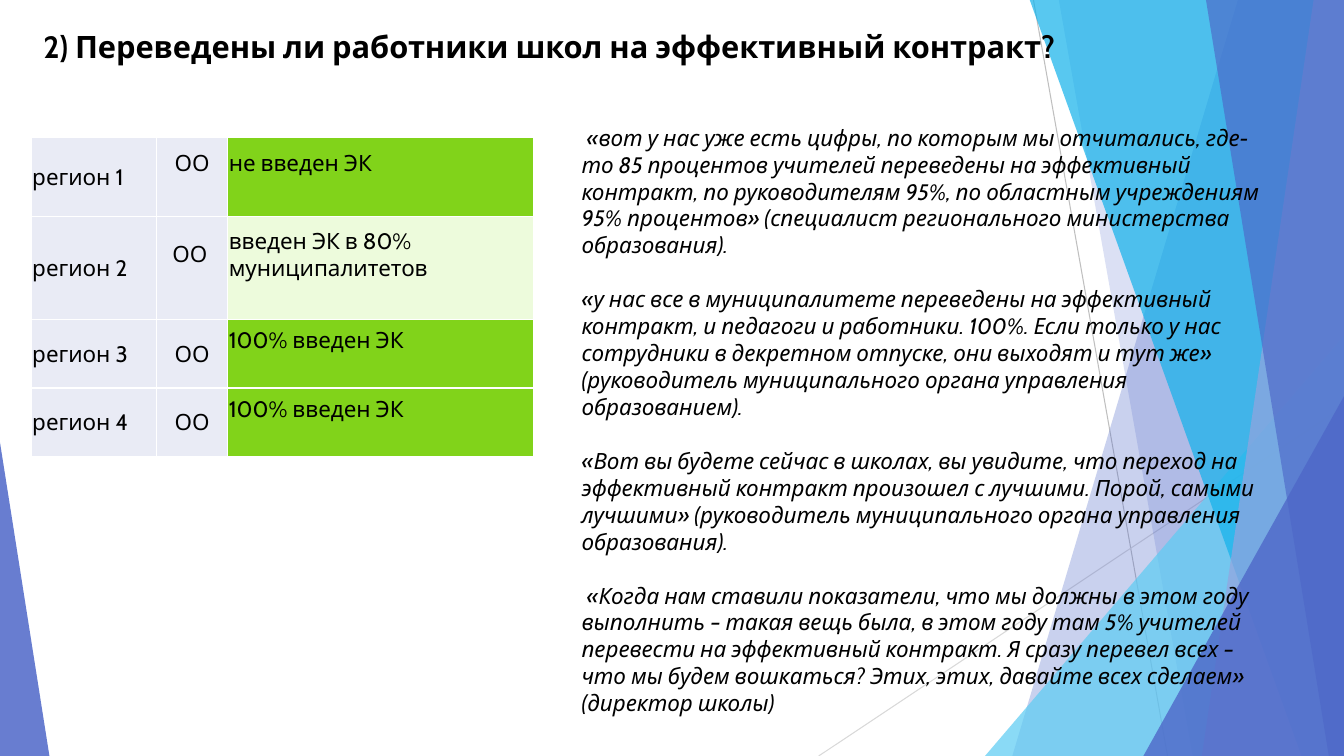
from lxml import etree
from pptx import Presentation
from pptx.dml.color import RGBColor
from pptx.enum import shapes, text
from pptx.oxml import ns
from pptx.util import Inches, Pt

FONT = "Cabin"
BLACK = RGBColor(0x00, 0x00, 0x00)
WHITE = RGBColor(0xFF, 0xFF, 0xFF)
GREY = RGBColor(0xBF, 0xBF, 0xBF)
LIGHT_GREY = RGBColor(0xD9, 0xD9, 0xD9)
INDIGO = RGBColor(0x4E, 0x67, 0xC8)
PALE_INDIGO = RGBColor(0x95, 0xA4, 0xDE)
SKY = RGBColor(0x5E, 0xCC, 0xF3)
AZURE = RGBColor(0x12, 0xB2, 0xEB)
LAVENDER = RGBColor(0xE9, 0xEB, 0xF5)
GREEN = RGBColor(0x81, 0xD3, 0x1A)
PALE_GREEN = RGBColor(0xED, 0xFB, 0xDC)

WIDTH, HEIGHT = 13.33, 7.5
LINE = 0.27

HEADING = "2) Переведены ли работники школ на эффективный контракт?"
REGIONS = [
    ("регион 1", "не введен ЭК", GREEN, 0.79),
    ("регион 2", "введен ЭК в 80% муниципалитетов", PALE_GREEN, 1.02),
    ("регион 3", "100% введен ЭК", GREEN, 0.68),
    ("регион 4", "100% введен ЭК", GREEN, 0.68),
]
QUOTES = [
    " «вот у нас уже есть цифры, по которым мы отчитались, где-то 85 процентов "
    "учителей переведены на эффективный контракт, по руководителям 95%, по областным "
    "учреждениям 95% процентов» (специалист регионального министерства образования).",
    "«у нас все в муниципалитете переведены на эффективный контракт, и педагоги и "
    "работники. 100%. Если только у нас сотрудники в декретном отпуске, они выходят и "
    "тут же» (руководитель муниципального органа управления образованием).",
    "«Вот вы будете сейчас в школах, вы увидите, что переход на эффективный контракт "
    "произошел с лучшими. Порой, самыми лучшими» (руководитель муниципального органа "
    "управления образования).",
    " «Когда нам ставили показатели, что мы должны в этом году выполнить – такая вещь "
    "была, в этом году там 5% учителей перевести на эффективный контракт. Я сразу "
    "перевел всех – что мы будем вошкаться? Этих, этих, давайте всех сделаем» "
    "(директор школы)",
]


def format_text(paragraph, size, bold=False, italic=False):
    for run in paragraph.runs:
        run.font.name = FONT
        run.font.size = Pt(size)
        run.font.bold = bold
        run.font.italic = italic
        run.font.color.rgb = BLACK


def paint(shape, color, opacity):
    shape.shadow.inherit = False
    shape.line.fill.background()
    shape.fill.solid()
    shape.fill.fore_color.rgb = color
    tint = shape._element.spPr.find(".//" + ns.qn("a:srgbClr"))
    etree.SubElement(tint, ns.qn("a:alpha"), val=str(opacity * 1000))


def add_ray(slide, start, end, color):
    ray = slide.shapes.add_connector(
        shapes.MSO_CONNECTOR.STRAIGHT, *map(Inches, start + end))
    ray.line.color.rgb = color
    ray.line.width = Pt(0.75)
    etree.SubElement(ray._element.spPr, ns.qn("a:effectLst"))


def add_panel(slide, top_x, bottom_x, color, opacity):
    corners = [(WIDTH, -0.01), (WIDTH, HEIGHT), (bottom_x, HEIGHT)]
    outline = slide.shapes.build_freeform(Inches(top_x), Inches(-0.01))
    outline.add_line_segments([(Inches(x), Inches(y)) for x, y in corners])
    paint(outline.convert_to_shape(), color, opacity)


def add_wedge(slide, left, top, width, apex, color, opacity):
    wedge = slide.shapes.add_shape(
        shapes.MSO_SHAPE.ISOSCELES_TRIANGLE,
        *map(Inches, (left, top, width, HEIGHT - top)))
    wedge.adjustments[0] = apex
    paint(wedge, color, opacity)


def add_backdrop(slide):
    add_ray(slide, (10.25, 0), (11.58, HEIGHT), GREY)
    add_ray(slide, (WIDTH, 4.03), (8.12, HEIGHT), LIGHT_GREY)
    add_panel(slide, 12.28, 10.04, INDIGO, 30)
    add_panel(slide, 10.5, 11.83, INDIGO, 20)
    add_wedge(slide, 9.77, 3.33, 3.56, 1, SKY, 72)
    add_panel(slide, 10.21, 12.91, AZURE, 70)
    add_panel(slide, 13.03, 11.92, PALE_INDIGO, 70)
    add_panel(slide, 11.96, 13.18, INDIGO, 65)
    add_wedge(slide, 11.34, 3.93, 1.99, 1, INDIGO, 80)
    add_wedge(slide, 0, 4.39, 0.49, 0, INDIGO, 85)


def set_title(slide):
    title = slide.shapes.title
    title.left, title.top, title.width, title.height = map(
        Inches, (0.33, 0.22, 12.39, 0.8))
    frame = title.text_frame
    frame.text = HEADING
    frame.auto_size = text.MSO_AUTO_SIZE.NONE
    frame.vertical_anchor = text.MSO_ANCHOR.TOP
    frame.paragraphs[0].alignment = text.PP_ALIGN.LEFT
    format_text(frame.paragraphs[0], 22, bold=True)
    slide.shapes._spTree.append(title._element)


def add_borders(cell):
    properties = cell._tc.get_or_add_tcPr()
    for index, side in enumerate(("lnL", "lnR", "lnT", "lnB")):
        border = etree.Element(ns.qn("a:" + side), w=str(Pt(1)))
        fill = etree.SubElement(border, ns.qn("a:solidFill"))
        etree.SubElement(fill, ns.qn("a:srgbClr"), val=str(WHITE))
        properties.insert(index, border)


def fill_cell(cell, wording, color, align=text.PP_ALIGN.LEFT, left=0.01, bottom=0):
    cell.text_frame.text = wording
    cell.vertical_anchor = text.MSO_ANCHOR.MIDDLE
    cell.margin_left = Inches(left)
    cell.margin_right = cell.margin_top = Inches(0.01)
    cell.margin_bottom = Inches(bottom)
    cell.fill.solid()
    cell.fill.fore_color.rgb = color
    paragraph = cell.text_frame.paragraphs[0]
    paragraph.alignment = align
    format_text(paragraph, 16)
    add_borders(cell)


def add_region_table(slide):
    table = slide.shapes.add_table(
        len(REGIONS), 3, *map(Inches, (0.31, 1.36, 4.98, 3.17))).table
    for column, width in zip(table.columns, (1.24, 0.71, 3.03)):
        column.width = Inches(width)
    for index, (region, status, color, height) in enumerate(REGIONS):
        table.rows[index].height = Inches(height)
        fill_cell(table.cell(index, 0), region, LAVENDER)
        fill_cell(table.cell(index, 1), "ОО", LAVENDER,
                  text.PP_ALIGN.LEFT if index == 1 else text.PP_ALIGN.CENTER,
                  0.16 if index == 1 else 0.01,
                  LINE if index < 2 else 0)
        fill_cell(table.cell(index, 2), status, color, bottom=LINE)


def add_quotes(slide):
    frame = slide.shapes.add_textbox(
        *map(Inches, (5.67, 1.15, 7.04, 6.06))).text_frame
    frame.word_wrap = True
    frame.margin_top = Inches(0.08)
    frame.text = "\n".join(QUOTES)
    for paragraph in frame.paragraphs:
        format_text(paragraph, 16, italic=True)
    for paragraph in frame.paragraphs[:-1]:
        paragraph.space_after = Inches(LINE)


def main():
    presentation = Presentation()
    presentation.slide_width = Inches(WIDTH)
    presentation.slide_height = Inches(HEIGHT)
    slide = presentation.slides.add_slide(presentation.slide_layouts[5])
    add_backdrop(slide)
    set_title(slide)
    add_region_table(slide)
    add_quotes(slide)
    presentation.save("out.pptx")


if __name__ == "__main__":
    main()
